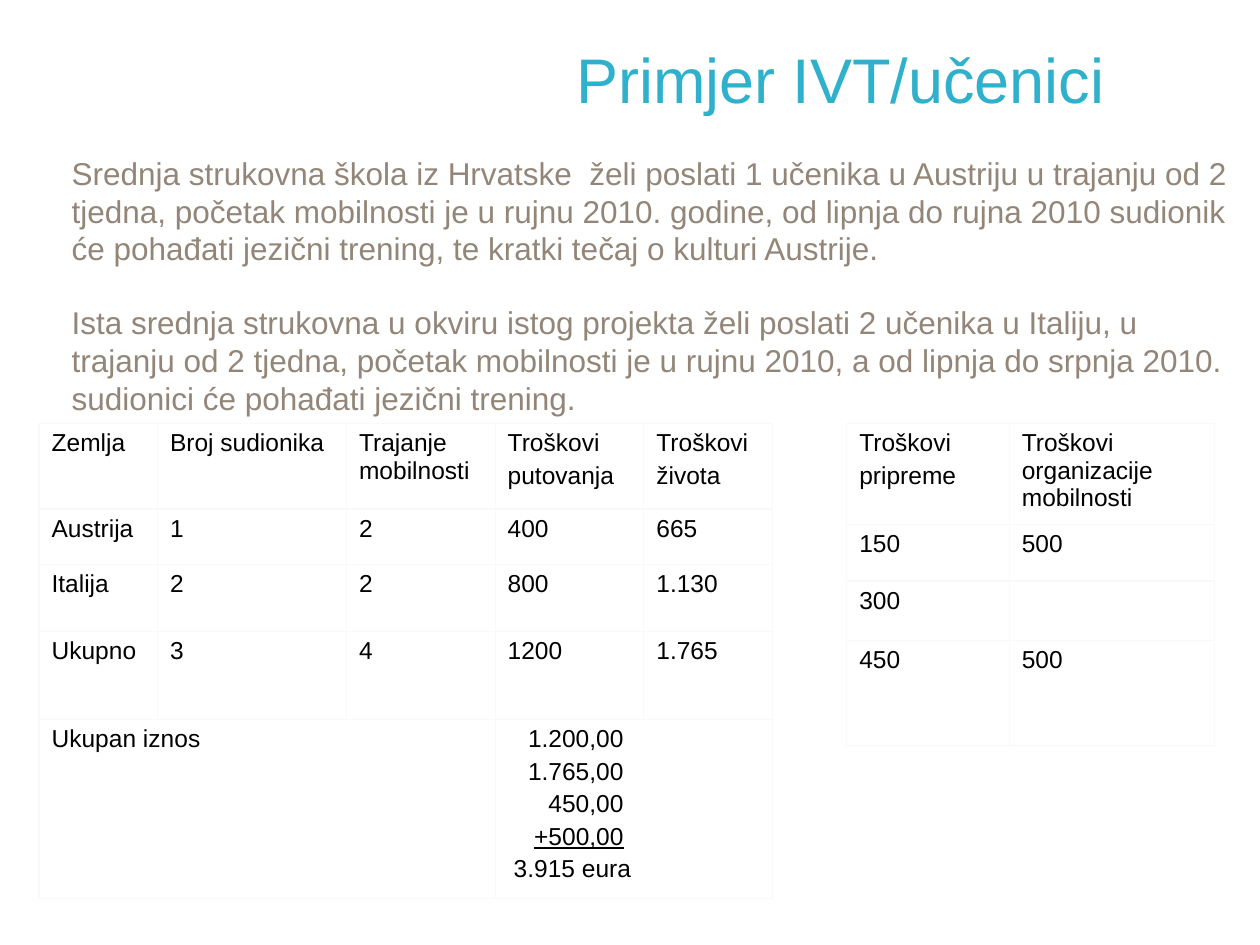
"""Builds the slide with the mobility grant example and its cost tables."""
from lxml import etree
from pptx import Presentation
from pptx.dml.color import RGBColor
from pptx.enum.text import MSO_ANCHOR, PP_ALIGN
from pptx.oxml.ns import qn
from pptx.util import Inches, Pt

MIDDLE = MSO_ANCHOR.MIDDLE
LEFT, CENTER = PP_ALIGN.LEFT, PP_ALIGN.CENTER
TEAL = RGBColor(0x2F, 0xB1, 0xCC)
TAUPE = RGBColor(0x93, 0x86, 0x78)
BLACK = RGBColor(0, 0, 0)
PALE_GREY = RGBColor(0xF9, 0xF9, 0xF9)

SCENARIO = [
    "Srednja strukovna škola iz Hrvatske  želi poslati 1 učenika u Austriju u "
    "trajanju od 2 tjedna, početak mobilnosti je u rujnu 2010. godine, od lipnja "
    "do rujna 2010 sudionik će pohađati jezični trening, te kratki tečaj o "
    "kulturi Austrije.",
    "Ista srednja strukovna u okviru istog projekta želi poslati 2 učenika u "
    "Italiju, u trajanju od 2 tjedna, početak mobilnosti je u rujnu 2010, a od "
    "lipnja do srpnja 2010. sudionici će pohađati jezični trening.",
]
COUNTRY_COSTS = [
    ["Zemlja", "Broj sudionika", "Trajanje mobilnosti", "Troškovi\nputovanja", "Troškovi\nživota"],
    ["Austrija", "1", "2", "400", "665"],
    ["Italija", "2", "2", "800", "1.130"],
    ["Ukupno", "3", "4", "1200", "1.765"],
    ["Ukupan iznos", "", "", "\t1.200,00\n\t1.765,00\n\t450,00\n\t+500,00\n\t3.915 eura", ""],
]
PREPARATION_COSTS = [
    ["Troškovi\npripreme", "Troškovi organizacije mobilnosti"],
    ["150", "500"],
    ["300", ""],
    ["450", "500"],
]


class SlideBuilder:
    """Holds the style and the current slide."""

    font_name = "Arial"
    cell_size = 14
    cell_gap = 2.8
    border_width = 0.75

    def __init__(self, slide):
        self.slide = slide

    def format_text(self, frame, size, color, gap=0, align=LEFT):
        """Applies one style to every paragraph of a text frame."""
        for index, paragraph in enumerate(frame.paragraphs):
            paragraph.alignment = align
            paragraph.space_before = Pt(gap if index else 0)
            for run in paragraph.runs:
                run.font.name = self.font_name
                run.font.size = Pt(size)
                run.font.color.rgb = color

    def text(self, content, left, top, width, height, size, color, gap=0, align=LEFT):
        """Adds a vertically centred text box."""
        box = self.slide.shapes.add_textbox(
            Inches(left), Inches(top), Inches(width), Inches(height))
        frame = box.text_frame
        frame.word_wrap = True
        frame.vertical_anchor = MIDDLE
        frame.text = content
        self.format_text(frame, size, color, gap, align)

    def border(self, cell):
        """Draws a thin line on all four sides of a cell."""
        properties = cell._tc.get_or_add_tcPr()
        for side in ("a:lnL", "a:lnR", "a:lnT", "a:lnB"):
            line = etree.SubElement(properties, qn(side), w=str(Pt(self.border_width)))
            fill = etree.SubElement(line, qn("a:solidFill"))
            etree.SubElement(fill, qn("a:srgbClr"), val=str(PALE_GREY))

    def table(self, rows, left, top, widths, heights):
        """Adds a plain bordered table and returns it."""
        table = self.slide.shapes.add_table(
            len(rows), len(widths), Inches(left), Inches(top),
            Inches(sum(widths)), Inches(sum(heights))).table
        table.first_row = False
        table.horz_banding = False
        for column, width in zip(table.columns, widths):
            column.width = Inches(width)
        for row, height, values in zip(table.rows, heights, rows):
            row.height = Inches(height)
            for cell, value in zip(row.cells, values):
                self.border(cell)
                cell.fill.background()
                cell.text_frame.text = value
                self.format_text(cell.text_frame, self.cell_size, BLACK, self.cell_gap)
        return table

    def right_tab(self, paragraph, position):
        """Sets a right-aligned tab stop."""
        stops = etree.Element(qn("a:tabLst"))
        etree.SubElement(stops, qn("a:tab"), pos=str(Inches(position)), algn="r")
        paragraph._p.get_or_add_pPr().append(stops)


def main():
    presentation = Presentation()
    presentation.slide_width = Inches(10)
    presentation.slide_height = Inches(7.5)
    builder = SlideBuilder(presentation.slides.add_slide(presentation.slide_layouts[6]))

    builder.text("\n".join(SCENARIO), 0.47, 1.48, 9.53, 1.57, 18, TAUPE, gap=20.7)
    builder.text("Primjer IVT/učenici", 2.42, 0, 8.5, 1.25, 36, TEAL, align=CENTER)

    country_table = builder.table(
        COUNTRY_COSTS, 0.31, 3.36,
        [0.94, 1.5, 1.18, 1.18, 1.02], [0.68, 0.44, 0.53, 0.7, 1.35])
    country_table.cell(4, 0).merge(country_table.cell(4, 2))
    total_cell = country_table.cell(4, 3)
    total_cell.merge(country_table.cell(4, 4))
    *addends, grand_total = total_cell.text_frame.paragraphs
    for addend in addends:
        builder.right_tab(addend, 0.92)
    builder.right_tab(grand_total, 0.98)
    addends[-1].runs[0].font.underline = True

    builder.table(PREPARATION_COSTS, 6.72, 3.36, [1.29, 1.63], [0.75, 0.45, 0.47, 0.84])
    presentation.save("out.pptx")


if __name__ == "__main__":
    main()
